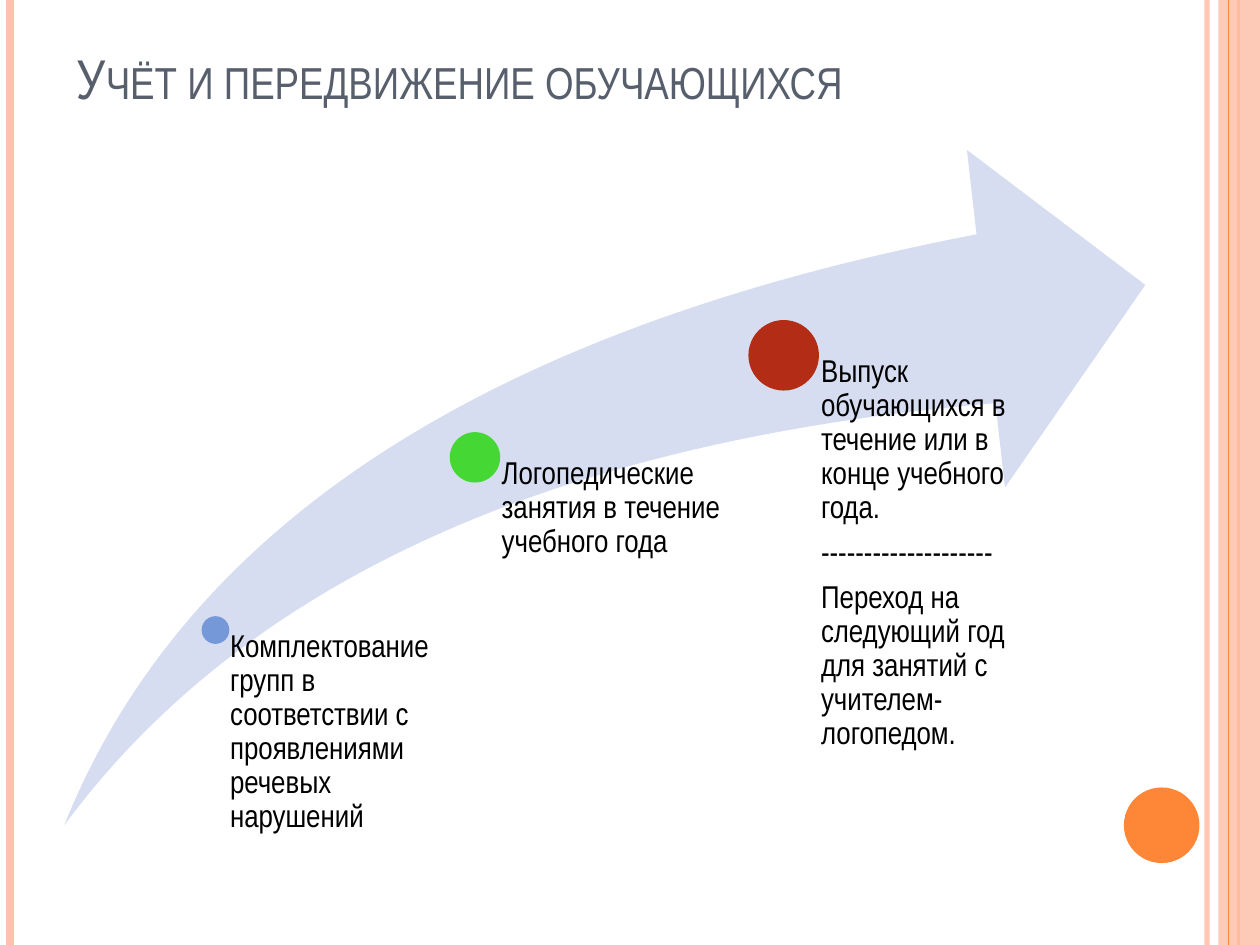
from lxml.etree import SubElement
from pptx import Presentation
from pptx.dml.color import RGBColor
from pptx.enum.shapes import MSO_CONNECTOR, MSO_SHAPE
from pptx.enum.text import MSO_ANCHOR
from pptx.oxml.ns import qn
from pptx.util import Inches, Pt

COLS, ROWS = 100, 75
PEACH, ORANGE = "FEC3AE", "FE8637"


def rgb(code):
    return RGBColor.from_string(code)


class Deck:
    """Current slide and its style; lengths are columns and rows of a 100 x 75 grid."""

    font = "Arial Narrow"

    def __init__(self, prs):
        self.col = prs.slide_width / COLS
        self.row = prs.slide_height / ROWS
        self.slide = prs.slides.add_slide(prs.slide_layouts[6])

    def box(self, x, y, w, h):
        return [int(v) for v in (x * self.col, y * self.row, w * self.col, h * self.row)]

    def paint(self, fill, color, alpha=100):
        fill.solid()
        fill.fore_color.rgb = rgb(color)
        if alpha < 100:
            clr = fill._xPr.find(".//" + qn("a:srgbClr"))
            SubElement(clr, qn("a:alpha"), val=str(alpha * 1000))

    def shape(self, kind, box, color, alpha=100):
        sp = self.slide.shapes.add_shape(kind, *self.box(*box))
        sp.shadow.inherit = False
        sp.line.fill.background()
        self.paint(sp.fill, color, alpha)
        return sp

    def dot(self, cx, cy, size, color):
        return self.shape(MSO_SHAPE.OVAL, (cx - size / 2, cy - size / 2, size, size), color)

    def stripe(self, x, width, color, alpha=100):
        """Vertical line over the full height of the slide."""
        x = int(x * self.col)
        line = self.slide.shapes.add_connector(
            MSO_CONNECTOR.STRAIGHT, x, 0, x, int(ROWS * self.row))
        line.line.width = Pt(width)
        self.paint(line.line.fill, color, alpha)
        SubElement(line._element.spPr, qn("a:effectLst"))

    def text(self, box, paragraphs, size, color, frame=None, spacing=None, small_caps=False):
        tf = self.slide.shapes.add_textbox(*self.box(*box)).text_frame
        for name, value in {"word_wrap": True, **(frame or {})}.items():
            setattr(tf, name, value)
        for i, words in enumerate(paragraphs):
            p = tf.paragraphs[0] if i == 0 else tf.add_paragraph()
            for name, value in (spacing or {}).items():
                setattr(p, name, value)
            r = p.add_run()
            r.text = words
            for name, value in {"name": self.font, "size": Pt(size)}.items():
                setattr(r.font, name, value)
            r.font.color.rgb = rgb(color)
            if small_caps:
                r._r.get_or_add_rPr().set("cap", "small")

    def stage(self, cx, cy, size, color, width, bottom, paragraphs):
        """Dot on the arrow, with its text starting at the dot's centre."""
        self.dot(cx, cy, size, color)
        frame = {"margin_left": int(size * 0.53 * self.col),
                 "margin_top": 0, "margin_right": 0, "margin_bottom": 0}
        self.text((cx, cy, width, bottom - cy), paragraphs, 18, "000000", frame,
                  {"line_spacing": 0.9, "space_after": Pt(6.3)})


STAGES = [
    (17.1, 50, 2.2, "7598D9", 20,
     ["Комплектование групп в соответствии с проявлениями речевых нарушений"]),
    (37.7, 36.3, 4, "45D834", 20.6,
     ["Логопедические занятия в течение учебного года"]),
    (62.2, 28.2, 5.6, "B32C16", 20.6,
     ["Выпуск обучающихся в течение или в конце учебного года.",
      "-" * 20,
      "Переход на следующий год для занятий с учителем-логопедом."]),
]


def main():
    prs = Presentation()
    prs.slide_width, prs.slide_height = Inches(10), Inches(7.5)
    s = Deck(prs)

    s.stripe(95.8, 3, PEACH, 93)
    s.stripe(0.8, 4.5, PEACH)
    s.stripe(98.3, 1.5, ORANGE)
    s.shape(MSO_SHAPE.RECTANGLE, (96.7, 0, 3.3, ROWS), PEACH, 87)
    s.stripe(97.5, 0.75, ORANGE)
    s.dot(92.2, 65.5, 6, ORANGE)

    s.text((5.1, 0, 90, 9.3), ["Учёт и передвижение обучающихся"], 32, "575F6D",
           {"vertical_anchor": MSO_ANCHOR.BOTTOM}, small_caps=True)

    top, height = 11.9, 53.6
    arrow = s.shape(MSO_SHAPE.SWOOSH_ARROW, (5.1, top, 85.8, height), "D6DDF1")
    for i in range(2):
        arrow.adjustments[i] = 0.25
    for *place, paragraphs in STAGES:
        s.stage(*place, top + height, paragraphs)

    prs.save("out.pptx")


if __name__ == "__main__":
    main()
